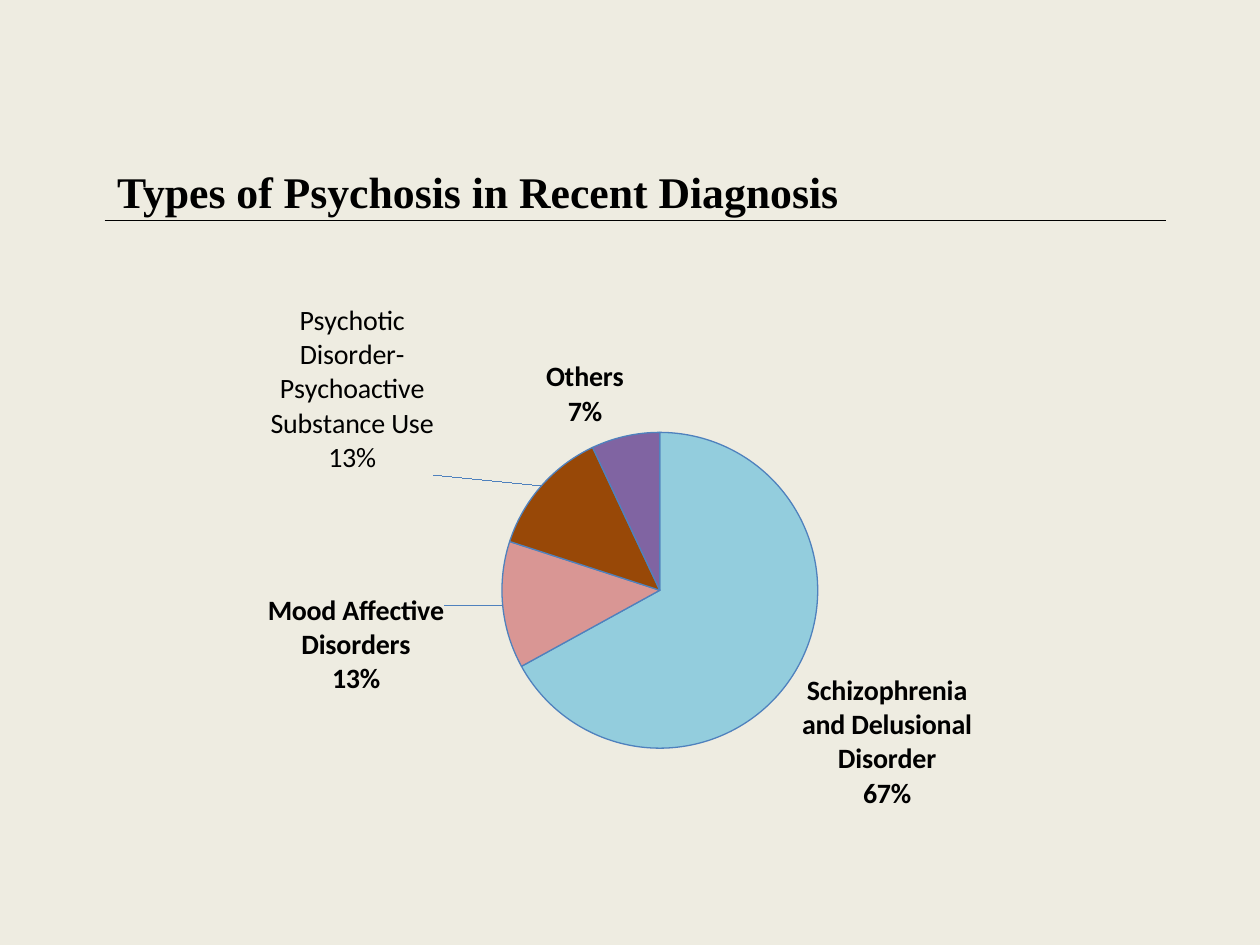
from lxml import etree
from pptx import Presentation
from pptx.chart.data import CategoryChartData
from pptx.dml.color import RGBColor
from pptx.enum.chart import XL_CHART_TYPE, XL_LABEL_POSITION
from pptx.enum.shapes import MSO_CONNECTOR
from pptx.enum.text import MSO_ANCHOR, PP_ALIGN
from pptx.oxml import parse_xml
from pptx.oxml.ns import nsdecls, qn
from pptx.util import Inches, Pt

COLORS = {
    "background": "EEECE1",
    "text": "000000",
    "outline": "4F81BD",
    "schizophrenia": "93CDDD",
    "mood": "D99694",
    "psychoactive": "984807",
    "others": "8064A2",
}
DIAGNOSES = [
    ("Schizophrenia and Delusional Disorder", 67, "schizophrenia"),
    ("Mood Affective Disorders", 13, "mood"),
    ("Psychotic Disorder", 13, "psychoactive"),
    ("Others", 7, "others"),
]
MOOD, PSYCHOACTIVE = 1, 2


def color(name):
    """Return a palette colour."""
    return RGBColor.from_string(COLORS[name])


def style_font(font, family, size, bold):
    """Apply family, size, weight and the text colour."""
    font.name, font.size, font.bold = family, Pt(size), bold
    font.color.rgb = color("text")


def style_outline(line, name):
    """Give a line its thin stroke."""
    line.color.rgb = color(name)
    line.width = Pt(0.75)


def manual_layout(**values):
    """Return a chart layout element holding shares of the chart's size."""
    parts = "".join(f'<c:{key} val="{value}"/>' for key, value in values.items())
    return parse_xml(
        f'<c:layout {nsdecls("c")}><c:manualLayout>{parts}</c:manualLayout></c:layout>'
    )


def add_heading(slide, text):
    """Place the title and the rule beneath it."""
    rule = slide.shapes.add_connector(
        MSO_CONNECTOR.STRAIGHT, Inches(0.83), Inches(1.75), Inches(9.25), Inches(1.75)
    )
    style_outline(rule.line, "text")
    etree.SubElement(rule._element.spPr, qn("a:effectLst"))
    title = slide.shapes.title
    title.left, title.top = Inches(0.83), Inches(1.18)
    title.width, title.height = Inches(8.5), Inches(0.67)
    frame = title.text_frame
    frame.text = text
    frame.vertical_anchor = MSO_ANCHOR.MIDDLE
    heading = frame.paragraphs[0]
    heading.alignment = PP_ALIGN.LEFT
    style_font(heading.runs[0].font, "Times New Roman", 25, True)


def move_label(series, index, x, y):
    """Shift one slice label from its default place and show name and share."""
    series.points[index].data_label.position = XL_LABEL_POSITION.OUTSIDE_END
    label = next(
        entry for entry in series._element.iter(qn("c:dLbl"))
        if entry.find(qn("c:idx")).get("val") == str(index)
    )
    label.find(qn("c:idx")).addnext(manual_layout(x=x, y=y))
    for flag, shown in (("showVal", 0), ("showCatName", 1), ("showPercent", 1)):
        label.find(qn(f"c:{flag}")).set("val", str(shown))


def add_labels(series):
    """Label every slice with its category and percentage."""
    labels = series.data_labels
    labels.show_value = False
    labels.show_category_name = labels.show_percentage = True
    labels.number_format, labels.number_format_is_linked = "0%", False
    labels.position = XL_LABEL_POSITION.OUTSIDE_END
    style_font(labels.font, "Calibri", 16, True)
    style_font(series.points[MOOD].data_label.font, "Calibri", 16, True)
    psychoactive = series.points[PSYCHOACTIVE].data_label.text_frame
    psychoactive.text = "Psychotic Disorder-Psychoactive Substance Use\n13%"
    for paragraph in psychoactive.paragraphs:
        style_font(paragraph.runs[0].font, "Calibri", 16, False)
    move_label(series, MOOD, -0.05, -0.02)
    move_label(series, PSYCHOACTIVE, -0.1, -0.01)


def add_diagnosis_pie(slide):
    """Add the pie of diagnoses with coloured slices."""
    data = CategoryChartData()
    data.categories = [name for name, _, _ in DIAGNOSES]
    data.add_series("Series 1", [share for _, share, _ in DIAGNOSES])
    chart = slide.shapes.add_chart(
        XL_CHART_TYPE.PIE, Inches(0.98), Inches(2.25), Inches(8.11), Inches(4.73), data
    ).chart
    chart.has_legend = chart.has_title = False
    style_font(chart.font, "Calibri", 10, False)
    plot = chart.plots[0]
    plot.vary_by_categories = True
    series = plot.series[0]
    style_outline(series.format.line, "outline")
    for index, (_, _, tint) in enumerate(DIAGNOSES):
        piece = series.points[index].format
        piece.fill.solid()
        piece.fill.fore_color.rgb = color(tint)
        style_outline(piece.line, "outline")
    add_labels(series)
    area = chart._chartSpace.chart.plotArea
    for automatic in area.findall(qn("c:layout")):
        area.remove(automatic)
    area.insert(0, manual_layout(
        layoutTarget="inner", xMode="edge", yMode="edge", x=0.37, y=0.25, w=0.31, h=0.53
    ))


def main():
    """Build and save the slide."""
    deck = Presentation()
    deck.slide_width, deck.slide_height = Inches(10), Inches(7.5)
    slide = deck.slides.add_slide(deck.slide_layouts[5])
    slide.background.fill.solid()
    slide.background.fill.fore_color.rgb = color("background")
    add_heading(slide, "Types of Psychosis in Recent Diagnosis")
    add_diagnosis_pie(slide)
    deck.save("out.pptx")


if __name__ == "__main__":
    main()
